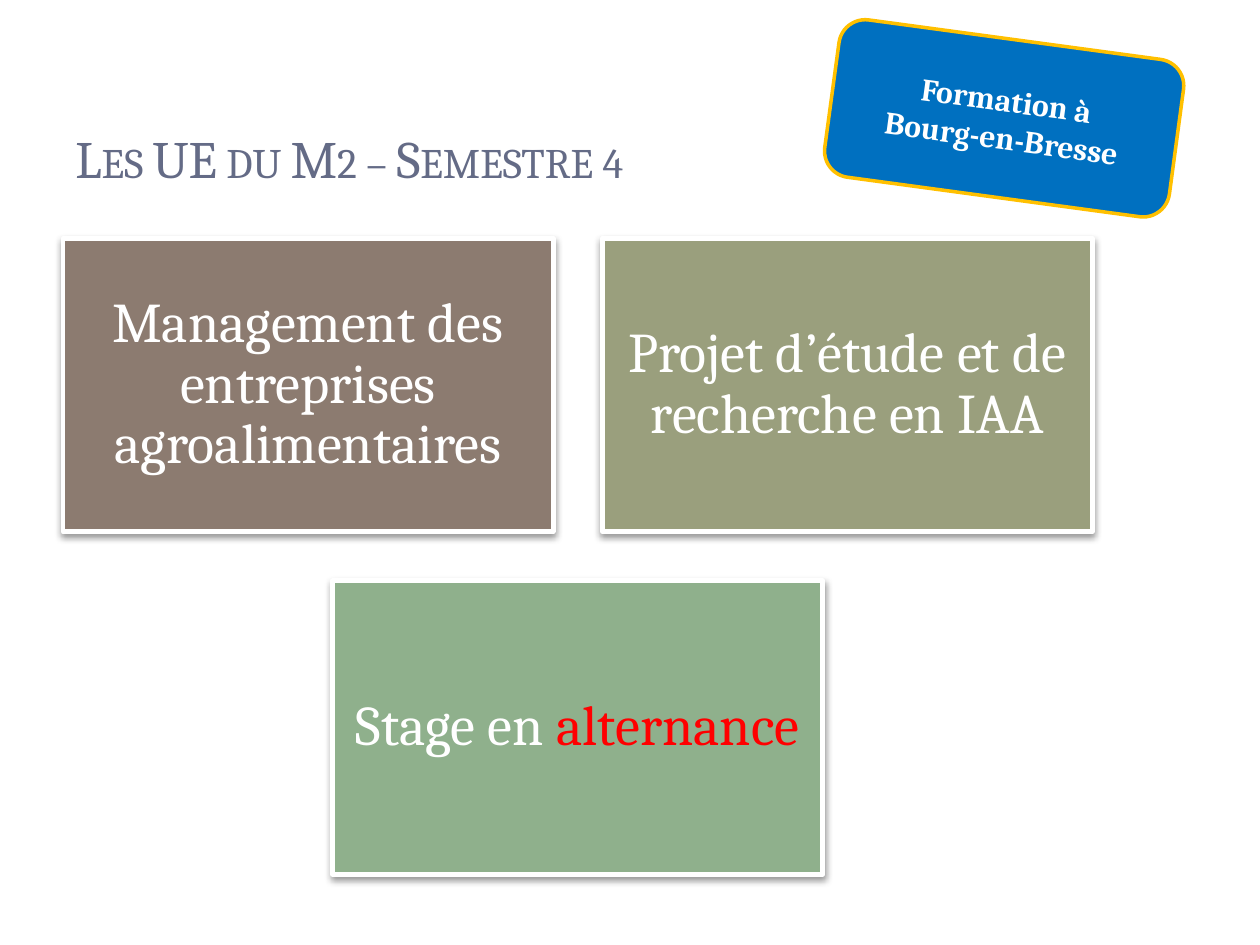
from lxml import etree
from pptx import Presentation
from pptx import util as u
from pptx.dml.color import RGBColor
from pptx.enum import shapes, text
from pptx.oxml import ns

WHITE = RGBColor(0xFF, 0xFF, 0xFF)
SLATE = RGBColor(0x64, 0x6B, 0x86)
BROWN = RGBColor(0x8C, 0x7B, 0x70)
OLIVE = RGBColor(0x9A, 0x9F, 0x7D)
GREEN = RGBColor(0x8F, 0xB0, 0x8C)
RED = RGBColor(0xFF, 0x00, 0x00)
BLUE = RGBColor(0x00, 0x70, 0xC0)
GOLD = RGBColor(0xFF, 0xC0, 0x00)

# Card grid, in inches
LEFT, TOP = 0.5, 1.89
CARD_WIDTH, CARD_HEIGHT, GAP = 3.89, 2.33, 0.39


def write(para, wording, size=18, color=WHITE, bold=False, small_caps=False):
    span = para.add_run()
    span.text = wording
    span.font.name = "Cambria"
    span.font.size = u.Pt(size)
    span.font.bold = bold
    span.font.color.rgb = color
    if small_caps:
        span.font._element.set("cap", "small")


def cast_shadow(shape):
    """Give the shape a soft black shadow straight below it."""
    effects = shape._element.spPr.find(ns.qn("a:effectLst"))
    shadow = etree.SubElement(
        effects, ns.qn("a:outerShdw"), blurRad=str(u.Pt(4)), dist=str(u.Pt(2)),
        dir="5400000", rotWithShape="0")
    black = etree.SubElement(shadow, ns.qn("a:srgbClr"), val="000000")
    etree.SubElement(black, ns.qn("a:alpha"), val="40000")


class SlideBuilder:
    def __init__(self, deck):
        self.slide = deck.slides.add_slide(deck.slide_layouts[6])

    def title(self, wording):
        box = self.slide.shapes.add_textbox(*map(u.Inches, (0.5, 0.3, 8.17, 1.25)))
        frame = box.text_frame
        frame.word_wrap = True
        frame.vertical_anchor = text.MSO_ANCHOR.BOTTOM
        write(frame.paragraphs[0], wording, size=30, color=SLATE, small_caps=True)

    def panel(self, kind, place, fill, line, width):
        shape = self.slide.shapes.add_shape(kind, *map(u.Inches, place))
        shape.shadow.inherit = False
        shape.fill.solid()
        shape.fill.fore_color.rgb = fill
        shape.line.color.rgb = line
        shape.line.width = u.Pt(width)
        shape.text_frame.word_wrap = True
        shape.text_frame.vertical_anchor = text.MSO_ANCHOR.MIDDLE
        return shape

    def card(self, column, row, fill, spans):
        """Place a card on the grid; spans are (wording, colour) pairs."""
        place = (LEFT + column * (CARD_WIDTH + GAP), TOP + row * (CARD_HEIGHT + GAP),
                 CARD_WIDTH, CARD_HEIGHT)
        shape = self.panel(shapes.MSO_SHAPE.RECTANGLE, place, fill, WHITE, 2.75)
        cast_shadow(shape)
        frame = shape.text_frame
        frame.margin_left = frame.margin_right = u.Inches(0.13)
        frame.margin_top = frame.margin_bottom = u.Inches(0.13)
        para = frame.paragraphs[0]
        para.alignment = text.PP_ALIGN.CENTER
        para.line_spacing = 0.9
        for wording, color in spans:
            write(para, wording, size=32, color=color)

    def badge(self, lines):
        shape = self.panel(shapes.MSO_SHAPE.ROUNDED_RECTANGLE,
                           (6.59, 0.31, 2.76, 1.26), BLUE, GOLD, 2)
        shape.rotation = 7.7
        frame = shape.text_frame
        for index, wording in enumerate(lines):
            para = frame.add_paragraph() if index else frame.paragraphs[0]
            para.alignment = text.PP_ALIGN.CENTER
            write(para, wording, bold=True)


def main():
    deck = Presentation()
    deck.slide_width, deck.slide_height = u.Inches(10), u.Inches(7.5)
    builder = SlideBuilder(deck)
    builder.title("Les UE du M2 – Semestre 4")
    builder.card(0, 0, BROWN, [("Management des entreprises agroalimentaires", WHITE)])
    builder.card(1, 0, OLIVE, [("Projet d’étude et de recherche en IAA", WHITE)])
    builder.card(0.5, 1, GREEN, [("Stage en ", WHITE), ("alternance", RED)])
    builder.badge(["Formation à", "Bourg-en-Bresse"])
    deck.save("out.pptx")


if __name__ == "__main__":
    main()
